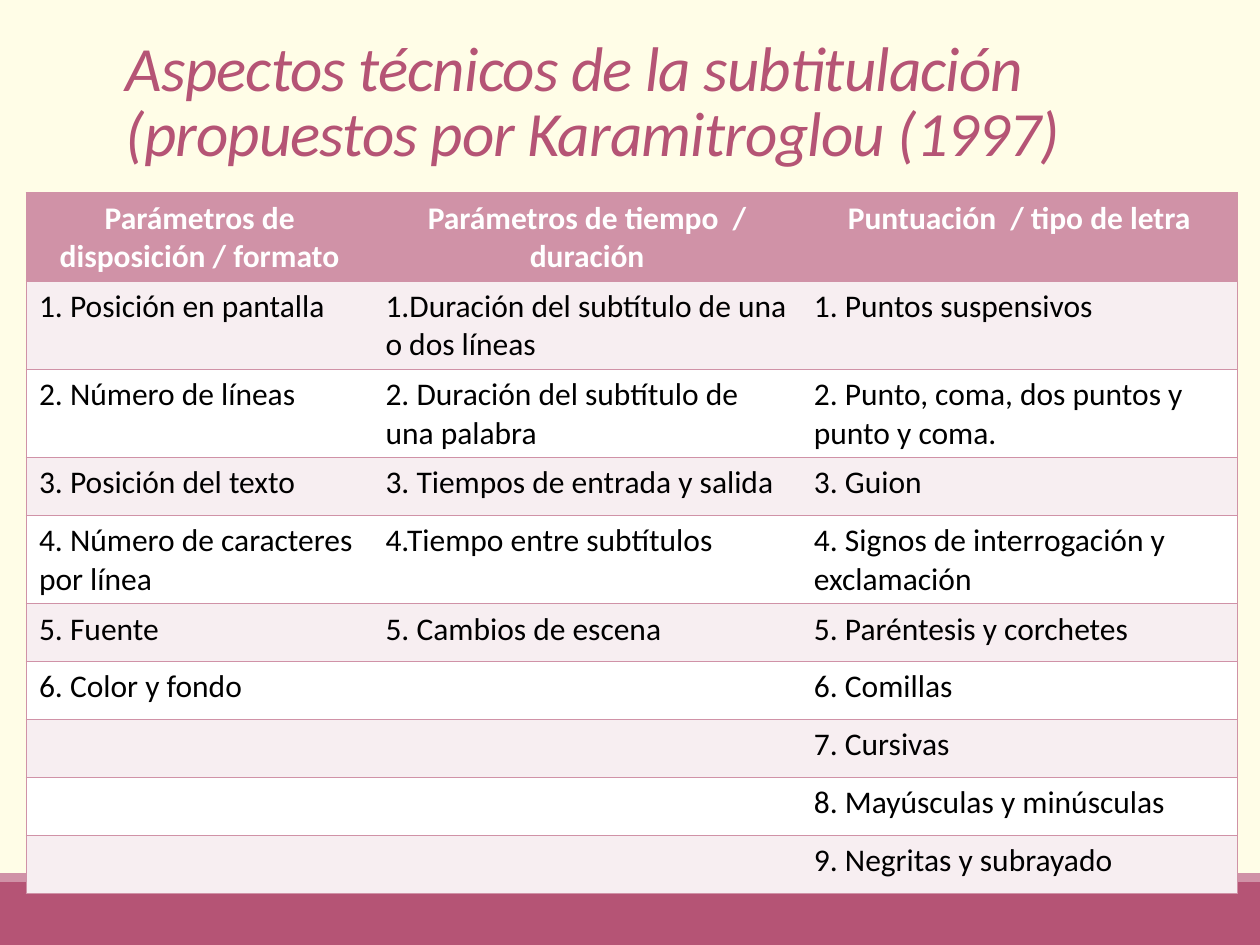
import pptx
import pptx.dml.color
import pptx.enum.shapes
import pptx.enum.text
import pptx.oxml
import pptx.oxml.ns
import pptx.util

Inches = pptx.util.Inches
ALIGN = pptx.enum.text.PP_ALIGN
ANCHOR = pptx.enum.text.MSO_ANCHOR
ROSE, PINK, PALE, WHITE, BLACK, CREAM = "B55475", "D092A7", "F7EEF1", "FFFFFF", "000000", "FFFDE7"

HEADINGS = [
    "Parámetros de disposición / formato",
    "Parámetros de tiempo  / duración",
    "Puntuación  / tipo de letra",
]
ASPECTS = [
    ["1. Posición en pantalla", "1.Duración del subtítulo de una o dos líneas", "1. Puntos suspensivos"],
    ["2. Número de líneas", "2. Duración del subtítulo de una palabra", "2. Punto, coma, dos puntos y punto y coma."],
    ["3. Posición del texto", "3. Tiempos de entrada y salida", "3. Guion"],
    ["4. Número de caracteres por línea", "4.Tiempo entre subtítulos", "4. Signos de interrogación y exclamación"],
    ["5. Fuente", "5. Cambios de escena", "5. Paréntesis y corchetes"],
    ["6. Color y fondo", "", "6. Comillas"],
    ["", "", "7. Cursivas"],
    ["", "", "8. Mayúsculas y minúsculas"],
    ["", "", "9. Negritas y subrayado"],
]
COLUMN_WIDTHS = [2.75, 3.4, 3.46]
ROW_HEIGHT, TALL_ROW_HEIGHT, TALL_ROWS = 0.46, 0.66, (0, 4)


def paint(fill, color):
    fill.solid()
    fill.fore_color.rgb = pptx.dml.color.RGBColor.from_string(color)


def write(para, text, color, **formats):
    span = para.add_run()
    span.text = text
    for name, value in {"name": "Calibri", **formats}.items():
        setattr(span.font, name, value)
    paint(span.font.fill, color)
    return span


def set_borders(cell, sides):
    properties = cell._tc.get_or_add_tcPr()
    for position, side in enumerate("LRTB"):
        fill = f'<a:solidFill><a:srgbClr val="{PINK}"/></a:solidFill>' if side in sides else "<a:noFill/>"
        border = pptx.oxml.parse_xml(
            f'<a:ln{side} {pptx.oxml.ns.nsdecls("a")} w="12700">{fill}</a:ln{side}>'
        )
        properties.insert(position, border)


def add_band(page, box, color):
    band = page.shapes.add_shape(pptx.enum.shapes.MSO_SHAPE.RECTANGLE, *map(Inches, box))
    band.shadow.inherit = False
    band.line.fill.background()
    paint(band.fill, color)


def add_footer(page, box):
    left, top, width, height = box
    edge = 0.07
    add_band(page, (left, top + edge, width, height - edge), ROSE)
    add_band(page, (left, top, width, edge), PINK)


def add_title(page, box):
    frame = page.shapes.add_textbox(*map(Inches, box)).text_frame
    for name, value in {"word_wrap": True, "vertical_anchor": ANCHOR.BOTTOM}.items():
        setattr(frame, name, value)
    para = frame.paragraphs[0]
    para.line_spacing = 0.85
    title = "Aspectos técnicos de la subtitulación (propuestos por Karamitroglou (1997)"
    span = write(para, title, ROSE, size=pptx.util.Pt(36), italic=True)
    span._r.get_or_add_rPr().set("spc", "-50")


def add_aspects_table(page, box):
    rows = [HEADINGS, *ASPECTS]
    holder = page.shapes.add_table(len(rows), len(HEADINGS), *map(Inches, box))
    table = holder.table
    table.horz_banding = False
    for column, width in zip(table.columns, COLUMN_WIDTHS):
        column.width = Inches(width)
    for row_index, texts in enumerate(rows):
        heading = row_index == 0
        table.rows[row_index].height = Inches(TALL_ROW_HEIGHT if row_index in TALL_ROWS else ROW_HEIGHT)
        row_color = PINK if heading else (WHITE, PALE)[row_index % 2]
        for column_index, text in enumerate(texts):
            cell = table.cell(row_index, column_index)
            set_borders(cell, ("LTB", "TB", "RTB")[column_index])
            paint(cell.fill, row_color)
            para = cell.text_frame.paragraphs[0]
            para.alignment = ALIGN.CENTER if heading else ALIGN.LEFT
            if text:
                write(para, text, WHITE if heading else BLACK, size=pptx.util.Pt(18), bold=heading)
    holder.height = Inches(box[3])


def main():
    deck = pptx.Presentation()
    deck.slide_width, deck.slide_height = Inches(10), Inches(7.5)
    page = deck.slides.add_slide(deck.slide_layouts[6])
    paint(page.background.fill, CREAM)
    add_footer(page, (0, 6.93, 10, 0.57))
    add_title(page, (0.9, 0.22, 8.25, 1.17))
    add_aspects_table(page, (0.21, 1.53, 9.6, 5.58))
    deck.save("out.pptx")


if __name__ == "__main__":
    main()
